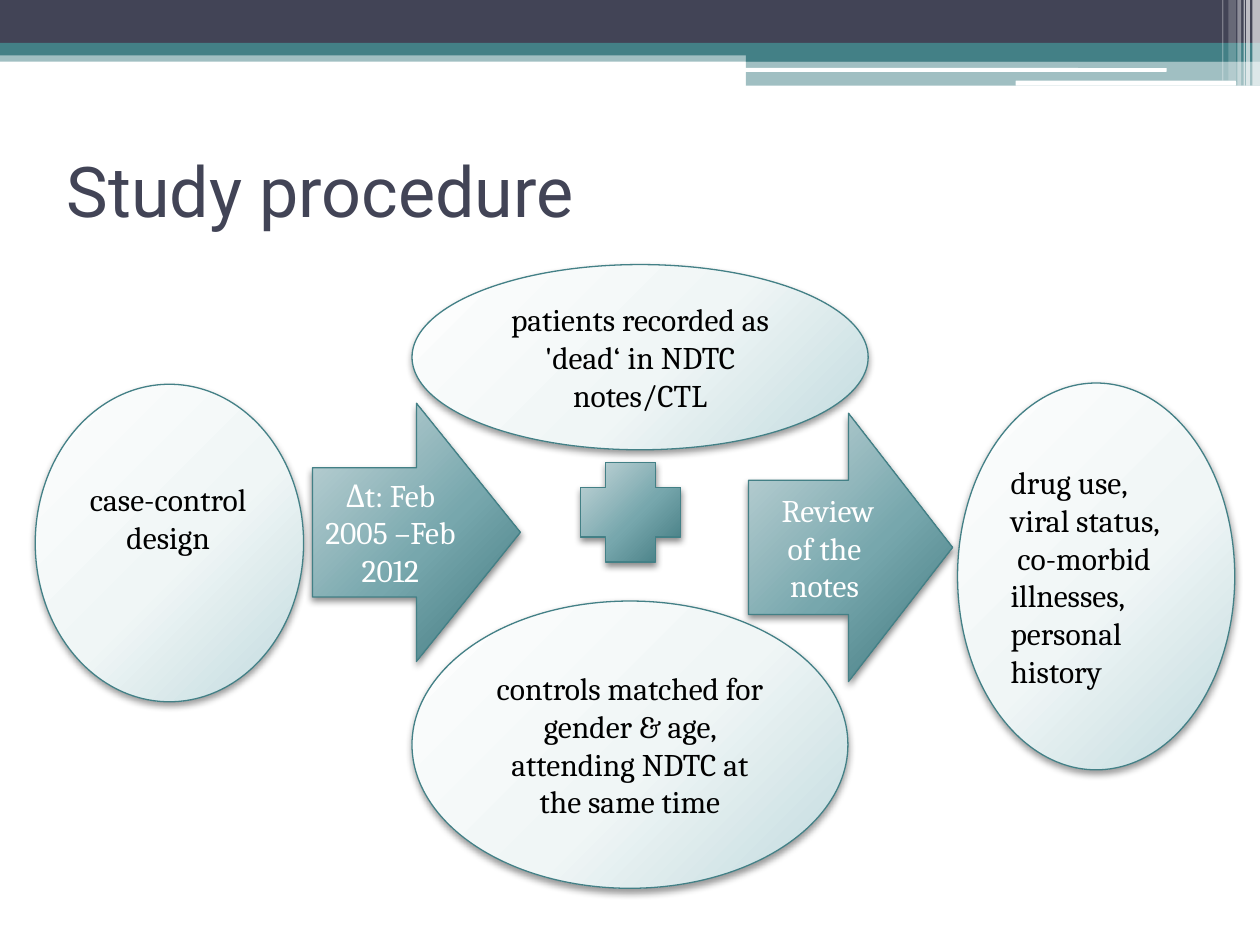
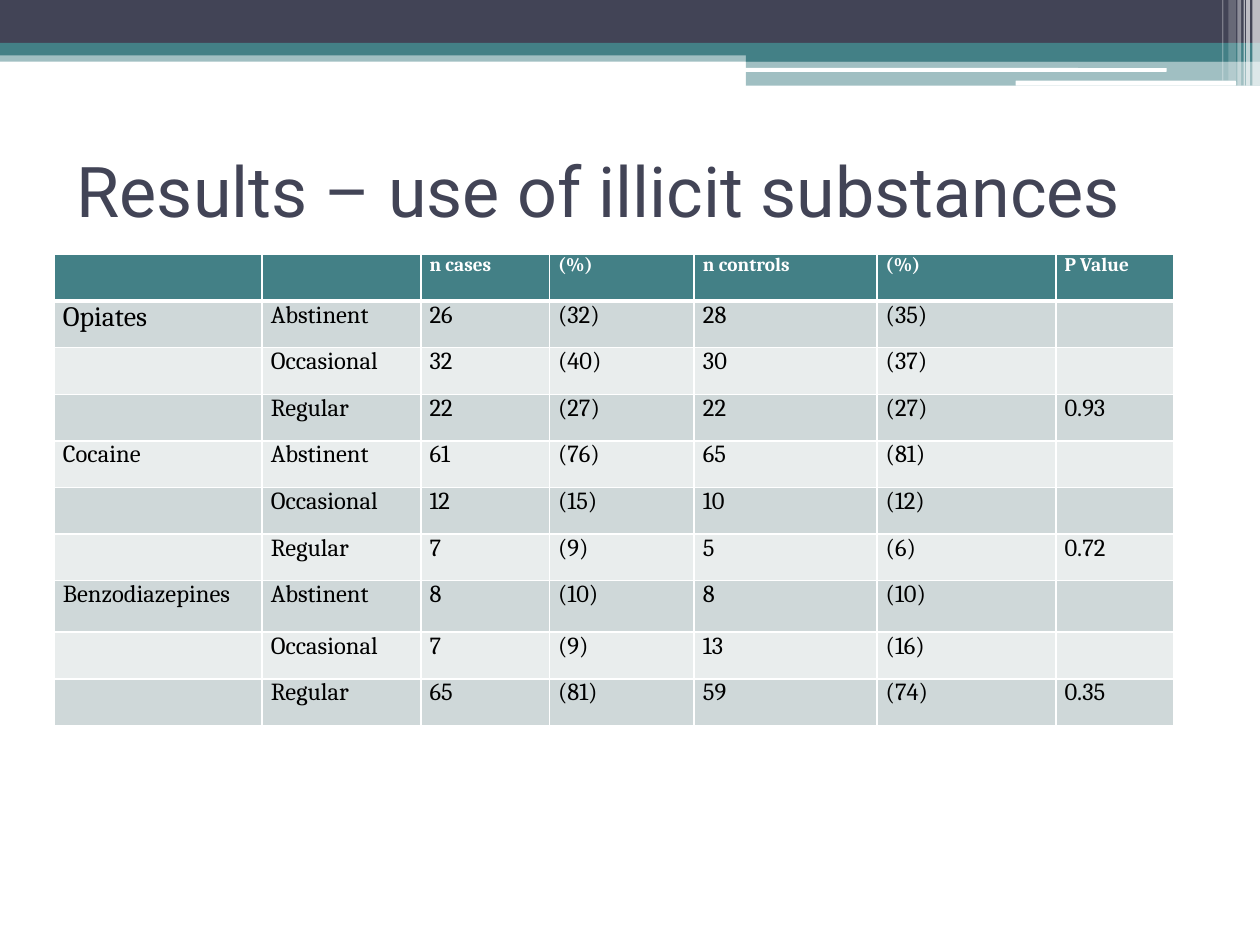
import dataclasses

import lxml.etree
import pptx
import pptx.dml.color
import pptx.enum.shapes
import pptx.enum.text
import pptx.oxml
import pptx.oxml.ns
import pptx.util

Inches = pptx.util.Inches
Pt = pptx.util.Pt
SHAPE = pptx.enum.shapes.MSO_SHAPE
ALIGN = pptx.enum.text.PP_ALIGN
ANCHOR = pptx.enum.text.MSO_ANCHOR


@dataclasses.dataclass(frozen=True)
class Theme:
    """Colours, fonts and type sizes of the presentation."""

    navy: str = "424456"
    teal: str = "438086"
    white: str = "FFFFFF"
    black: str = "000000"
    row_fills: tuple = ("CFD8D9", "E9EDED")
    pale_gradient: tuple = ((0, "FEFEFE"), (55, "F0F6F6"), (100, "BFD9DD"))
    strong_gradient: tuple = ((0, "C7D7DA"), (55, "77A7AD"), (100, "3E777D"))
    title_font: str = "Roboto"
    body_font: str = "Cambria"
    title_size: int = 40
    diagram_size: int = 18
    group_size: int = 16
    cell_size: int = 14
    header_size: int = 11


THEME = Theme()

BANDS = [
    (SHAPE.RECTANGLE, 0, 0.4, 10, 0.09, THEME.teal, 50),
    (SHAPE.RECTANGLE, 0, 0, 10, 0.34, THEME.navy, 100),
    (SHAPE.RECTANGLE, 0, 0.34, 10, 0.1, THEME.teal, 100),
    (SHAPE.RECTANGLE, 5.92, 0.39, 4.08, 0.1, THEME.teal, 100),
    (SHAPE.RECTANGLE, 5.92, 0.48, 4.08, 0.2, THEME.teal, 50),
    (SHAPE.ROUNDED_RECTANGLE, 5.91, 0.54, 3.35, 0.03, THEME.white, 100),
    (SHAPE.ROUNDED_RECTANGLE, 8.06, 0.64, 1.75, 0.04, THEME.white, 100),
]
STRIPES = [
    (9.94, 0.06, 0.68, 65),
    (9.89, 0.03, 0.68, 65),
    (9.87, 0.01, 0.68, 60),
    (9.82, 0.03, 0.68, 40),
    (9.75, 0.06, 0.64, 20),
    (9.7, 0.01, 0.64, 30),
]

COLUMN_WIDTHS = [1.65, 1.26, 1.02, 1.15, 1.45, 1.42, 0.94]
ROW_HEIGHT = 0.37
TALL_ROW, TALL_ROW_HEIGHT = 7, 0.41
TABLE_HEADER = ["", "", "n cases", "(%)", "n controls", "(%)", "P Value"]
USE_LEVELS = ["Abstinent", "Occasional", "Regular"]
SUBSTANCES = [
    ("Opiates", "0.93", [(26, 32, 28, 35), (32, 40, 30, 37), (22, 27, 22, 27)]),
    ("Cocaine", "0.72", [(61, 76, 65, 81), (12, 15, 10, 12), (7, 9, 5, 6)]),
    ("Benzodiazepines", "0.35", [(8, 10, 8, 10), (7, 9, 13, 16), (65, 81, 59, 74)]),
]


def rgb(color):
    """Return a colour object for a hex string."""
    return pptx.dml.color.RGBColor.from_string(color)


def drawing_element(xml):
    """Parse a fragment written in the drawing namespace."""
    namespace = pptx.oxml.ns.nsdecls("a")
    return pptx.oxml.parse_xml(xml.replace(">", f" {namespace}>", 1))


def format_text(text_frame, font, size, color, align=ALIGN.LEFT, bold=False):
    """Format every paragraph and run of a text frame."""
    for paragraph in text_frame.paragraphs:
        paragraph.alignment = align
        for run in paragraph.runs:
            run.font.name = font
            run.font.size = Pt(size)
            run.font.bold = bold
            run.font.color.rgb = rgb(color)


def add_band(slide, kind, left, top, width, height, color, opacity):
    """Add one flat band of the slide header."""
    band = slide.shapes.add_shape(kind, Inches(left), Inches(top), Inches(width), Inches(height))
    band.shadow.inherit = False
    band.line.fill.background()
    band.fill.solid()
    band.fill.fore_color.rgb = rgb(color)
    if opacity < 100:
        color_element = band._element.spPr.find(".//" + pptx.oxml.ns.qn("a:srgbClr"))
        alpha = lxml.etree.SubElement(color_element, pptx.oxml.ns.qn("a:alpha"))
        alpha.set("val", str(opacity * 1000))


def add_titled_slide(presentation, title, left):
    """Add a slide with the header bands and a formatted title."""
    slide = presentation.slides.add_slide(presentation.slide_layouts[5])
    for band in BANDS:
        add_band(slide, *band)
    for stripe_left, width, height, opacity in STRIPES:
        add_band(slide, SHAPE.RECTANGLE, stripe_left, 0, width, height, THEME.white, opacity)
    shape = slide.shapes.title
    shape.left, shape.top = Inches(left), Inches(0.92)
    shape.width, shape.height = Inches(9), Inches(1.17)
    shape.text_frame.text = title
    shape.text_frame.auto_size = pptx.enum.text.MSO_AUTO_SIZE.NONE
    shape.text_frame.vertical_anchor = ANCHOR.MIDDLE
    format_text(shape.text_frame, THEME.title_font, THEME.title_size, THEME.navy)
    return slide


def style_glossy(shape, gradient, shadow_opacity):
    """Give a shape the radial gradient, thin outline and soft shadow."""
    stops = "".join(
        f'<a:gs pos="{position * 1000}"><a:srgbClr val="{color}"/></a:gs>'
        for position, color in gradient
    )
    properties = shape._element.spPr
    properties.insert(2, drawing_element(
        f'<a:gradFill rotWithShape="1"><a:gsLst>{stops}</a:gsLst><a:path path="circle">'
        '<a:fillToRect l="-40000" t="-90000" r="140000" b="190000"/></a:path></a:gradFill>'
    ))
    shape.line.color.rgb = rgb(THEME.teal)
    shape.line.width = Pt(0.75)
    properties.append(drawing_element(
        f'<a:effectLst><a:outerShdw blurRad="{Pt(4)}" dist="{Pt(2)}" dir="5400000" '
        f'rotWithShape="0"><a:srgbClr val="{THEME.black}">'
        f'<a:alpha val="{shadow_opacity * 1000}"/></a:srgbClr></a:outerShdw></a:effectLst>'
    ))


def add_step(slide, kind, box, text="", align=ALIGN.CENTER):
    """Add an ellipse, arrow or plus of the study diagram."""
    shape = slide.shapes.add_shape(kind, *map(Inches, box))
    is_ellipse = kind == SHAPE.OVAL
    if is_ellipse:
        style_glossy(shape, THEME.pale_gradient, 40)
    else:
        style_glossy(shape, THEME.strong_gradient, 45)
    if text:
        shape.text_frame.text = text
        shape.text_frame.word_wrap = True
        shape.text_frame.vertical_anchor = ANCHOR.MIDDLE
        color = THEME.black if is_ellipse else THEME.white
        format_text(shape.text_frame, THEME.body_font, THEME.diagram_size, color, align)
    return shape


def add_study_diagram(slide, left, top):
    """Draw the study flow from its top left corner."""
    def place(x, y, width, height):
        return left + x, top + y, width, height

    add_step(slide, SHAPE.OVAL, place(2.99, 2.67, 3.46, 2.28),
             "controls matched for gender & age, attending NDTC at the same time")
    add_step(slide, SHAPE.OVAL, place(2.99, 0, 3.62, 1.47),
             "patients recorded as 'dead‘ in NDTC notes/CTL")
    add_step(slide, SHAPE.RIGHT_ARROW, place(2.2, 1.1, 1.65, 2.05), "Δt: Feb 2005 –Feb 2012")
    add_step(slide, SHAPE.OVAL, place(0, 0.95, 2.13, 2.52))
    add_step(slide, SHAPE.CROSS, place(4.33, 1.57, 0.79, 0.79))
    add_step(slide, SHAPE.OVAL, place(7.32, 0.94, 2.2, 3.07),
             "drug use, viral status,\n co-morbid illnesses, personal history", ALIGN.LEFT)
    review = add_step(slide, SHAPE.RIGHT_ARROW, place(5.66, 1.18, 1.62, 2.13),
                      " Review of the notes")
    review.adjustments[1] = 0.51

    design = slide.shapes.add_textbox(*map(Inches, place(0.27, 1.66, 1.57, 0.71)))
    design.text_frame.word_wrap = True
    design.text_frame.text = "case-control design"
    format_text(design.text_frame, THEME.body_font, THEME.diagram_size, THEME.black, ALIGN.CENTER)


def table_rows():
    """Return the header and body rows of the results table."""
    rows = [TABLE_HEADER]
    for substance, p_value, counts in SUBSTANCES:
        for index, (level, numbers) in enumerate(zip(USE_LEVELS, counts)):
            cases, case_share, controls, control_share = numbers
            rows.append([
                substance if index == 0 else "", level,
                str(cases), f"({case_share})", str(controls), f"({control_share})",
                p_value if index == len(USE_LEVELS) - 1 else "",
            ])
    return rows


def set_borders(cell, top_width, bottom_width):
    """Draw white borders around a table cell."""
    properties = cell._tc.get_or_add_tcPr()
    widths = {"lnL": 1, "lnR": 1, "lnT": top_width, "lnB": bottom_width}
    for index, (side, width) in enumerate(widths.items()):
        properties.insert(index, drawing_element(
            f'<a:{side} w="{Pt(width)}"><a:solidFill><a:srgbClr val="{THEME.white}"/>'
            f'</a:solidFill></a:{side}>'
        ))


def fill_cell(cell, text, row, column):
    """Write and format one cell of the results table."""
    is_header = row == 0
    cell.margin_left = cell.margin_right = Inches(0.07)
    cell.margin_top = cell.margin_bottom = 0
    cell.fill.solid()
    cell.fill.fore_color.rgb = rgb(THEME.teal if is_header else THEME.row_fills[(row - 1) % 2])
    set_borders(cell, 3 if row == 1 else 1, 3 if is_header else 1)
    cell.text_frame.text = text
    size = THEME.cell_size
    if is_header:
        size = THEME.header_size
    elif (row, column) == (1, 0):
        size = THEME.group_size
    color = THEME.white if is_header else THEME.black
    format_text(cell.text_frame, THEME.body_font, size, color, bold=is_header)


def add_results_table(slide, left, top, width, height):
    """Add the table of substance use in the given box."""
    rows = table_rows()
    frame = slide.shapes.add_table(
        len(rows), len(COLUMN_WIDTHS), Inches(left), Inches(top), Inches(width), Inches(height)
    )
    table = frame.table
    table.first_row = table.horz_banding = False
    for column, column_width in zip(table.columns, COLUMN_WIDTHS):
        column.width = Inches(column_width)
    for row_index, values in enumerate(rows):
        row_height = TALL_ROW_HEIGHT if row_index == TALL_ROW else ROW_HEIGHT
        table.rows[row_index].height = Inches(row_height)
        for column_index, text in enumerate(values):
            fill_cell(table.cell(row_index, column_index), text, row_index, column_index)


def main():
    """Build and save the presentation."""
    presentation = pptx.Presentation()
    presentation.slide_width, presentation.slide_height = Inches(10), Inches(7.5)
    add_study_diagram(add_titled_slide(presentation, "Study procedure", 0.43), 0.28, 2.1)
    results = add_titled_slide(presentation, "Results – use of illicit substances", 0.51)
    add_results_table(results, 0.43, 2.02, 8.9, 3.73)
    presentation.save("out.pptx")


if __name__ == "__main__":
    main()
